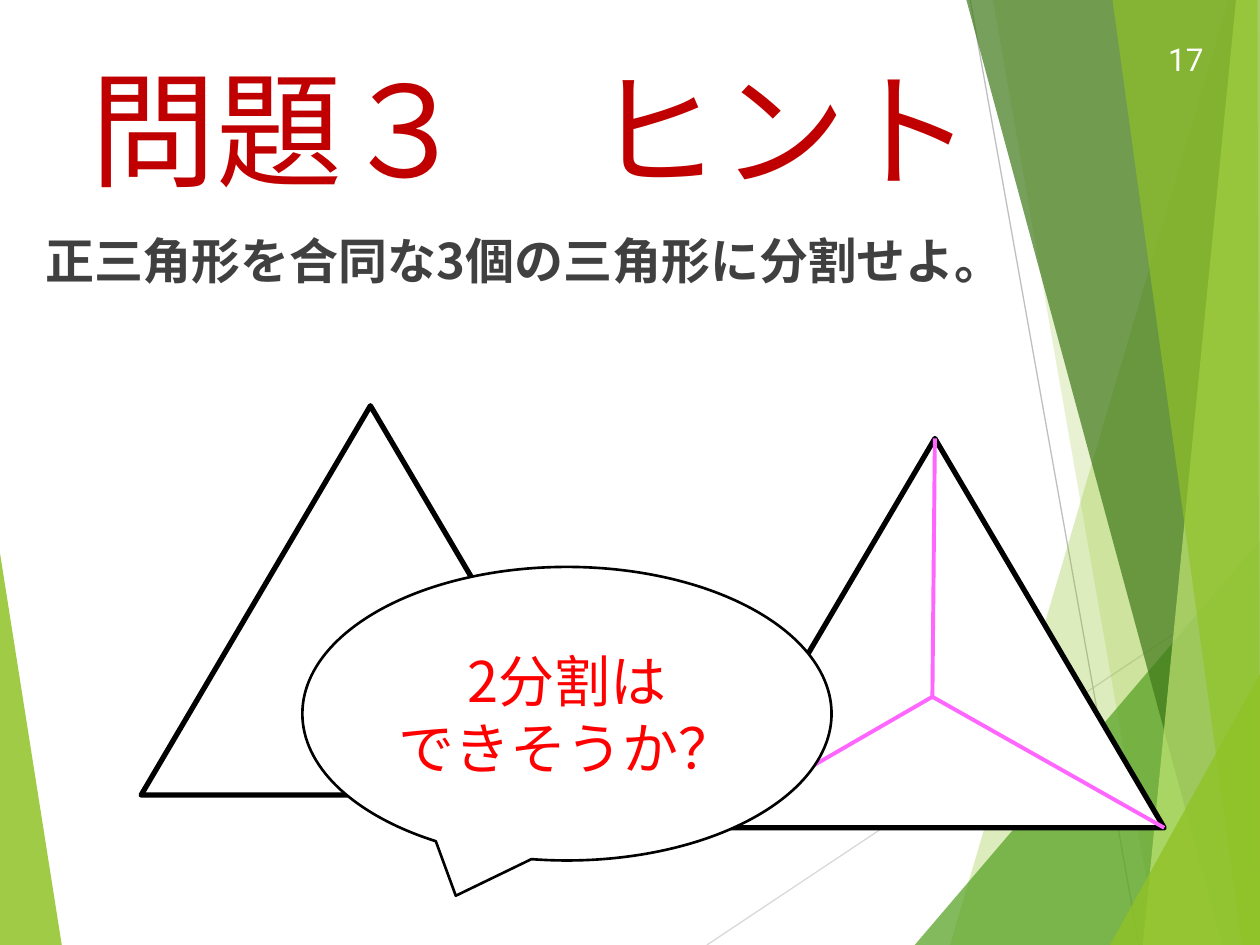
from dataclasses import dataclass
from lxml.etree import SubElement
from pptx import Presentation
from pptx.dml.color import RGBColor
from pptx.enum.shapes import MSO_CONNECTOR as Conn, MSO_SHAPE as Shape
from pptx.enum.text import MSO_ANCHOR as Anchor, PP_ALIGN as Align
from pptx.oxml.ns import qn
from pptx.util import Inches, Pt


@dataclass(frozen=True)
class Theme:
    font: str = "Noto Sans CJK JP"
    latin: str = "Roboto"
    white: str = "FFFFFF"
    black: str = "000000"
    title: str = "C00000"
    body: str = "404040"
    hint: str = "FF0000"
    cut: str = "FF66FF"
    lime: str = "90C226"
    green: str = "54A021"
    dark: str = "3F7819"
    pale: str = "C0E474"
    title_size: int = 72
    hint_size: int = 32
    body_size: int = 28
    page_size: int = 18


T = Theme()
W, H = 10, 7.5
RULES = [
    ((5.61, H), (10.01, 4.57), "D9D9D9"),
    ((7.7, 0), (9.04, H), "BFBFBF"),
]
BACK = [([(0, 4.39), (0.49, H), (0, H)], T.lime, 85)]
FRONT = [
    ([(9.75, 0), (7.54, H), (W, H), (W, 0)], T.lime, 30),
    ([(7.88, 0), (9.19, H), (W, H), (W, 0)], T.lime, 20),
    ([(7.26, H), (W, 4.29), (W, H)], T.green, 72),
    ([(7.67, 0), (9.7, H), (W, H), (W, 0)], T.dark, 70),
    ([(9.81, 0), (9.07, H), (W, H), (W, 0)], T.pale, 70),
    ([(8.83, 0), (9.86, H), (W, H), (9.98, 0)], T.lime, 65),
    ([(8.81, H), (W, 5.35), (W, H)], T.lime, 80),
]


def rgb(code):
    return RGBColor.from_string(code)


def inches(nums):
    return [Inches(n) for n in nums]


def facet(shapes, points, color, alpha):
    start, *rest = [inches(p) for p in points]
    pen = shapes.build_freeform(*start, scale=1.0)
    pen.add_line_segments(rest, close=True)
    item = pen.convert_to_shape()
    item.shadow.inherit = False
    item.line.fill.background()
    item.fill.solid()
    item.fill.fore_color.rgb = rgb(color)
    tint = item._element.spPr.find(qn("a:solidFill"))[0]
    SubElement(tint, qn("a:alpha")).set("val", str(alpha * 1000))


def line(shapes, start, end, color, width):
    item = shapes.add_connector(Conn.STRAIGHT, *inches(start + end))
    item.line.color.rgb = rgb(color)
    item.line.width = Pt(width)
    SubElement(item._element.spPr, qn("a:effectLst"))


def figure(shapes, kind, box, width):
    item = shapes.add_shape(kind, *inches(box))
    item.shadow.inherit = False
    item.fill.solid()
    item.fill.fore_color.rgb = rgb(T.white)
    item.line.color.rgb = rgb(T.black)
    item.line.width = Pt(width)
    return item


def write(frame, rows, size, color, align=Align.CENTER,
          anchor=Anchor.MIDDLE, face=T.font, bold=False):
    frame.word_wrap = True
    frame.vertical_anchor = anchor
    for i, row in enumerate(rows):
        para = frame.add_paragraph() if i else frame.paragraphs[0]
        para.alignment = align
        run = para.add_run()
        run.text = row
        font = run.font
        font.name, font.size, font.bold = face, Pt(size), bold
        font.color.rgb = rgb(color)
        SubElement(run._r.rPr, qn("a:ea")).set("typeface", face)


def text(shapes, box, row, *style, **extra):
    frame = shapes.add_textbox(*inches(box)).text_frame
    write(frame, [row], *style, anchor=Anchor.TOP, **extra)
    return frame


def decor(shapes):
    group = shapes.add_group_shape().shapes
    for item in BACK:
        facet(group, *item)
    for start, end, color in RULES:
        line(group, start, end, color, 0.75)
    for item in FRONT:
        facet(group, *item)


def split(shapes):
    group = shapes.add_group_shape().shapes
    left, top, wide, high = box = (5.6, 3.48, 3.64, 3.09)
    figure(group, Shape.ISOSCELES_TRIANGLE, box, 3)
    base = top + high
    tips = [(left + wide / 2, top), (left, base), (left + wide, base)]
    for tip in tips:
        line(group, tip, (7.4, 5.53), T.cut, 2.25)


def bubble(shapes):
    item = figure(shapes, Shape.OVAL_CALLOUT, (2.4, 4.5, 4.2, 2.33), 1.5)
    item.adjustments[0] = -0.21
    item.adjustments[1] = 0.62
    write(item.text_frame, ["2分割は", "できそうか？"], T.hint_size, T.hint)


def head(shapes):
    item = shapes.title
    item.left, item.top, item.width, item.height = inches(
        (0.24, 0.31, 7.95, 1.4))
    write(item.text_frame, ["問題３　ヒント"], T.title_size, T.title)


def main():
    deck = Presentation()
    deck.slide_width, deck.slide_height = Inches(W), Inches(H)
    shapes = deck.slides.add_slide(deck.slide_layouts[5]).shapes
    head(shapes)
    decor(shapes)
    text(shapes, (9.07, 0.27, 0.58, 0.4), "17", T.page_size, T.white,
         align=Align.RIGHT, face=T.latin)
    split(shapes)
    figure(shapes, Shape.ISOSCELES_TRIANGLE, (1.12, 3.22, 3.64, 3.09), 3)
    bubble(shapes)
    task = text(shapes, (0.26, 1.78, 8.88, 0.66),
                "正三角形を合同な3個の三角形に分割せよ。",
                T.body_size, T.body, align=Align.LEFT, bold=True)
    task.paragraphs[0].space_before = Pt(10)
    deck.save("out.pptx")


if __name__ == "__main__":
    main()
